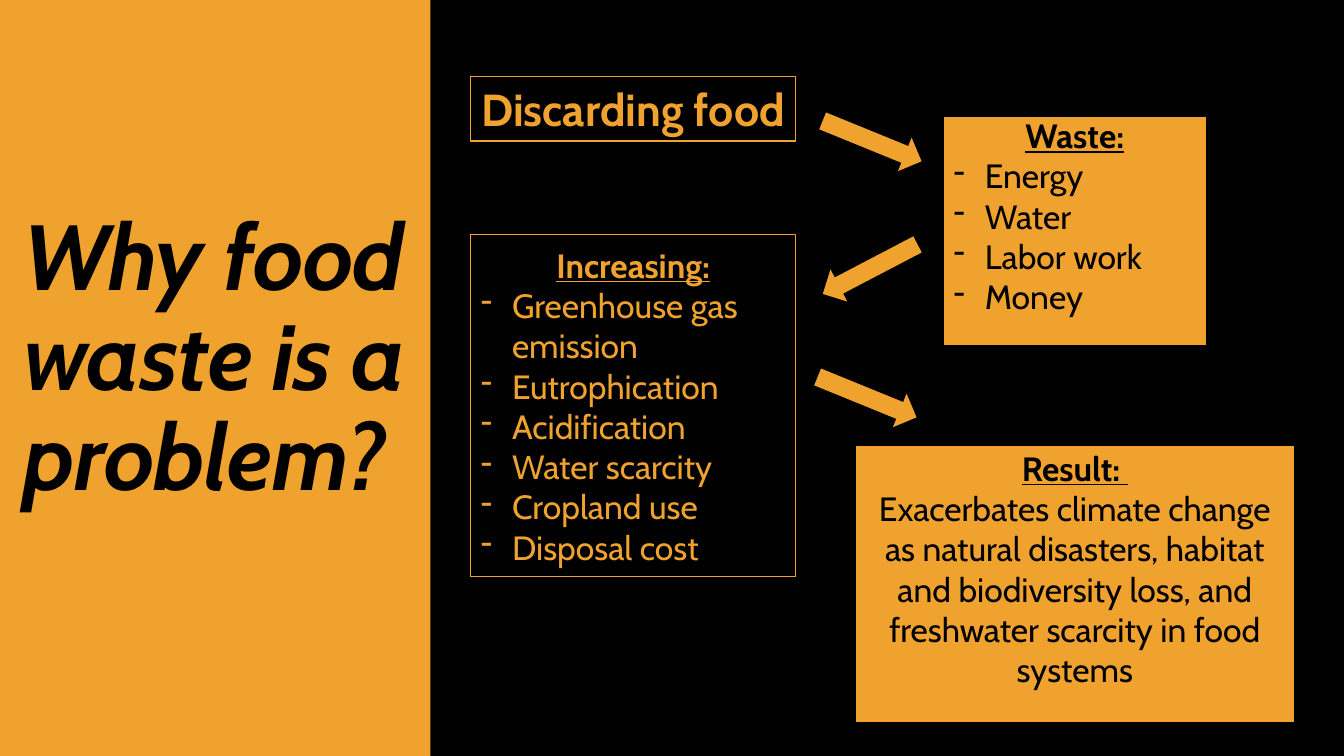
import pptx
import pptx.util
import pptx.dml.color
import pptx.enum.shapes
import pptx.enum.text
import pptx.oxml

Inches = pptx.util.Inches
Pt = pptx.util.Pt
SHAPE = pptx.enum.shapes.MSO_SHAPE
ALIGN = pptx.enum.text.PP_ALIGN
ANCHOR = pptx.enum.text.MSO_ANCHOR
BLACK = pptx.dml.color.RGBColor(0x00, 0x00, 0x00)
ORANGE = pptx.dml.color.RGBColor(0xF0, 0xA2, 0x2E)
FONT = "Cabin"
HEADING = {"size": Pt(24), "bold": True, "underline": True}
BODY = {"size": Pt(24), "bold": False, "underline": False}
BANNER = {"size": Pt(32), "bold": True}
TITLE = {"size": Pt(66), "bold": True, "italic": True}


def apply_format(target, values):
    """Set each attribute of the target from a dict of format values."""
    for attribute, value in values.items():
        setattr(target, attribute, value)


def style_font(run, color, values):
    """Give a run the slide's font, a colour and further format values."""
    apply_format(run.font, {"name": FONT, **values})
    run.font.color.rgb = color


def add_block(slide, preset, box, fill, outline=None):
    """Add a flat preset shape in the box (left, top, width, height)."""
    block = slide.shapes.add_shape(preset, *(Inches(length) for length in box))
    block.shadow.inherit = False
    block.fill.solid()
    block.fill.fore_color.rgb = fill
    if outline is None:
        block.line.fill.background()
    else:
        block.line.color.rgb = outline
        block.line.width = Pt(0.85)
    return block


def add_dash(paragraph):
    """Turn a paragraph into a hanging dash item."""
    properties = paragraph._p.get_or_add_pPr()
    properties.set("marL", str(Inches(0.31)))
    properties.set("indent", str(Inches(-0.31)))
    namespace = "http://schemas.openxmlformats.org/drawingml/2006/main"
    properties.append(pptx.oxml.parse_xml(
        f'<a:buFontTx xmlns:a="{namespace}"/>'))
    properties.append(pptx.oxml.parse_xml(
        f'<a:buChar xmlns:a="{namespace}" char="-"/>'))


def add_card(slide, box, lines, filled, bottom=0.05):
    """Add a card whose lines are (text, format, alignment, dashed)."""
    fill, ink = (ORANGE, BLACK) if filled else (BLACK, ORANGE)
    card = add_block(slide, SHAPE.FLOWCHART_PROCESS, box, fill,
                     None if filled else ORANGE)
    frame = card.text_frame
    apply_format(frame, {
        "word_wrap": True, "vertical_anchor": ANCHOR.MIDDLE,
        "margin_left": Inches(0.1), "margin_right": Inches(0.1),
        "margin_top": Inches(0.05), "margin_bottom": Inches(bottom)})
    for number, (text, values, alignment, dashed) in enumerate(lines):
        paragraph = frame.add_paragraph() if number else frame.paragraphs[0]
        paragraph.alignment = alignment
        if dashed:
            add_dash(paragraph)
        run = paragraph.add_run()
        run.text = text
        style_font(run, ink, values)


def add_list_card(slide, box, heading, items, filled, bottom=0.05):
    """Add a card with a centred heading above dash items."""
    lines = [(heading, HEADING, ALIGN.CENTER, False)]
    lines += [(item, BODY, ALIGN.LEFT, True) for item in items]
    add_card(slide, box, lines, filled, bottom)


def add_arrow(slide, box, rotation):
    """Add an orange block arrow turned clockwise by the rotation."""
    arrow = add_block(slide, SHAPE.RIGHT_ARROW, box, ORANGE)
    arrow.rotation = rotation


def add_title_panel(slide, box):
    """Fill the box with orange and set the slide title inside it."""
    left, top, width, height = box
    add_block(slide, SHAPE.RECTANGLE, box, ORANGE)
    title = slide.shapes.title
    slide.shapes._spTree.append(title._element)
    apply_format(title, {
        "left": Inches(left + 0.13), "top": Inches(top + 0.67),
        "width": Inches(width - 0.19), "height": Inches(height - 1.69)})
    frame = title.text_frame
    apply_format(frame, {
        "word_wrap": True, "vertical_anchor": ANCHOR.MIDDLE,
        "auto_size": pptx.enum.text.MSO_AUTO_SIZE.NONE})
    paragraph = frame.paragraphs[0]
    apply_format(paragraph, {"alignment": ALIGN.LEFT, "line_spacing": 0.9})
    run = paragraph.add_run()
    run.text = "Why food waste is a problem?"
    style_font(run, BLACK, TITLE)
    run._r.get_or_add_rPr().set("spc", "-60")


def add_flow(slide, box):
    """Lay out the chain from discarded food to its result in the box."""
    left, top, _, _ = box

    def place(x, y, width, height):
        """Shift a position to the origin of the flow."""
        return left + x, top + y, width, height

    add_card(slide, place(0.4, 0.76, 3.22, 0.64),
             [("Discarding food", BANNER, ALIGN.CENTER, False)], False)
    add_list_card(slide, place(5.09, 1.16, 2.6, 2.26), "Waste:",
                  ["Energy", "Water", "Labor work", "Money"], True, 0.35)
    add_list_card(slide, place(0.4, 2.33, 3.22, 3.39), "Increasing:",
                  ["Greenhouse gas emission", "Eutrophication",
                   "Acidification", "Water scarcity", "Cropland use",
                   "Disposal cost"], False)
    add_card(slide, place(4.22, 4.42, 4.34, 2.74), [
        ("Result: ", HEADING, ALIGN.CENTER, False),
        ("Exacerbates climate change as natural disasters, habitat and "
         "biodiversity loss, and freshwater scarcity in food systems",
         BODY, ALIGN.CENTER, False)], True, 0.35)
    for x, y, rotation in ((3.85, 1.22, 22.2), (3.83, 2.49, 152.4),
                           (3.8, 3.76, 22.2)):
        add_arrow(slide, place(x, y, 1.06, 0.36), rotation)


def main():
    """Build the slide and save it."""
    deck = pptx.Presentation()
    apply_format(deck, {"slide_width": Inches(13.33),
                        "slide_height": Inches(7.5)})
    slide = deck.slides.add_slide(deck.slide_layouts[5])
    slide.background.fill.solid()
    slide.background.fill.fore_color.rgb = BLACK
    panel_width = 4.27
    add_title_panel(slide, (0, 0, panel_width, 7.5))
    add_flow(slide, (panel_width, 0, 13.33 - panel_width, 7.5))
    deck.save("out.pptx")


if __name__ == "__main__":
    main()
